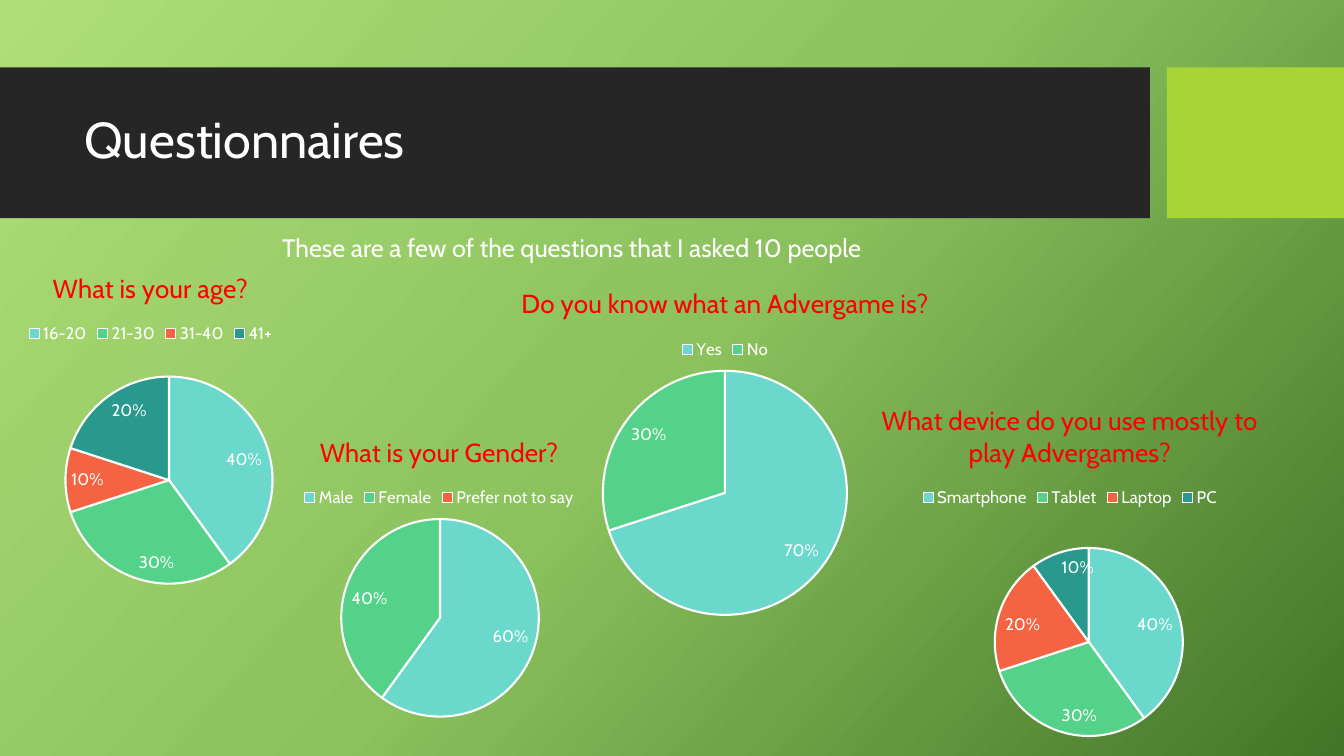
from copy import deepcopy
from dataclasses import dataclass

from lxml import etree
from pptx import Presentation
from pptx import util as u
from pptx.chart import data as chart_data
from pptx.dml.color import RGBColor
from pptx.enum import chart as chart_enum, shapes, text
from pptx.oxml import ns


@dataclass(frozen=True)
class Theme:
    font: str = "Cabin"
    white: str = "FFFFFF"
    question: str = "FF0000"
    banner: str = "262626"
    accent: str = "A7D535"
    background: tuple = ("AFDE77", "8BC25D", "437528")
    slices: tuple = ("6AD8CB", "54D289", "F46442", "28998C")
    title_size: float = 36
    intro_size: float = 18
    question_size: float = 18.6
    label_size: float = 12


THEME = Theme()

# question, answers in percent, frame (left, top, width, height),
# pie (centre x, centre y, diameter), all in centimetres
QUESTIONS = [
    ("What is your age?",
     {"16-20": 40, "21-30": 30, "31-40": 10, "41+": 20},
     (-2.72, 6.38, 13.03, 8.69), (4.26, 12.1, 5.22)),
    ("What is your Gender?",
     {"Male": 60, "Female": 40, "Prefer not to say": 0},
     (5.05, 10.52, 12.04, 7.9), (11.09, 15.57, 4.98)),
    ("Do you know what an Advergame is?",
     {"Yes": 70, "No": 30},
     (11.46, 6.76, 13.64, 9.09), (18.27, 12.42, 6.15)),
    ("What device do you use mostly to play Advergames?",
     {"Smartphone": 40, "Tablet": 30, "Laptop": 20, "PC": 10},
     (20.07, 9.7, 13.79, 9.19), (27.44, 16.18, 4.74)),
]


def color(value):
    return RGBColor.from_string(value)


def style_font(font, size, value=THEME.white):
    font.name = THEME.font
    font.size = u.Pt(size)
    font.bold = False
    font.color.rgb = color(value)


def paint_background(slide):
    fill = slide.background.fill
    fill.gradient()
    fill.gradient_angle = 318
    first, last = slide.element.iter(ns.qn("a:gs"))
    first.addnext(deepcopy(first))
    for index, (stop, value) in enumerate(zip(fill.gradient_stops, THEME.background)):
        stop.position = index / 2
        stop.color.rgb = color(value)


def add_block(slide, box, value):
    shape = slide.shapes.add_shape(
        shapes.MSO_SHAPE.RECTANGLE, *(u.Cm(length) for length in box))
    shape.shadow.inherit = False
    shape.fill.solid()
    shape.fill.fore_color.rgb = color(value)
    shape.line.fill.background()


def add_text(slide, box, words, size, anchor=text.MSO_ANCHOR.TOP, spacing=1.0):
    frame = slide.shapes.add_textbox(*(u.Cm(length) for length in box)).text_frame
    frame.word_wrap = True
    frame.vertical_anchor = anchor
    paragraph = frame.paragraphs[0]
    paragraph.line_spacing = spacing
    run = paragraph.add_run()
    run.text = words
    style_font(run.font, size)


def place_pie(chart, frame, pie):
    """Fix the pie inside the chart frame, as fractions of that frame."""
    left, top, width, height = frame
    centre_x, centre_y, diameter = pie
    values = {
        "layoutTarget": "inner",
        "xMode": "edge",
        "yMode": "edge",
        "x": (centre_x - diameter / 2 - left) / width,
        "y": (centre_y - diameter / 2 - top) / height,
        "w": diameter / width,
        "h": diameter / height,
    }
    plot_area = chart.element.find(".//" + ns.qn("c:plotArea"))
    for old_layout in plot_area.findall(ns.qn("c:layout")):
        plot_area.remove(old_layout)
    layout = etree.Element(ns.qn("c:layout"))
    manual = etree.SubElement(layout, ns.qn("c:manualLayout"))
    for name, value in values.items():
        rounded = value if isinstance(value, str) else f"{value:.4f}"
        etree.SubElement(manual, ns.qn(f"c:{name}")).set("val", rounded)
    plot_area.insert(0, layout)


def style_slices(plot, count):
    plot.vary_by_categories = True
    for index, value in enumerate(THEME.slices[:count]):
        slice_format = plot.series[0].points[index].format
        slice_format.fill.solid()
        slice_format.fill.fore_color.rgb = color(value)
        slice_format.line.color.rgb = color(THEME.white)
        slice_format.line.width = u.Pt(1.5)


def label_slices(plot):
    """Show percentages; the number format leaves zero blank."""
    plot.has_data_labels = True
    labels = plot.data_labels
    labels.show_percentage = True
    labels.show_value = False
    labels.number_format = "0%;;"
    labels.number_format_is_linked = False
    labels.position = chart_enum.XL_LABEL_POSITION.INSIDE_END
    style_font(labels.font, THEME.label_size)


def add_question_pie(slide, question, answers, frame, pie):
    data = chart_data.CategoryChartData()
    data.categories = list(answers)
    data.add_series("Series 1", list(answers.values()))
    chart = slide.shapes.add_chart(
        chart_enum.XL_CHART_TYPE.PIE, *(u.Cm(length) for length in frame), data).chart
    style_font(chart.font, THEME.label_size)

    chart.has_title = True
    run = chart.chart_title.text_frame.paragraphs[0].add_run()
    run.text = question
    style_font(run.font, THEME.question_size, THEME.question)
    chart.chart_title.include_in_layout = False

    chart.has_legend = True
    chart.legend.position = chart_enum.XL_LEGEND_POSITION.TOP
    chart.legend.include_in_layout = False
    style_font(chart.legend.font, THEME.label_size)

    style_slices(chart.plots[0], len(answers))
    label_slices(chart.plots[0])
    place_pie(chart, frame, pie)


def main():
    presentation = Presentation()
    presentation.slide_width = u.Cm(33.87)
    presentation.slide_height = u.Cm(19.05)
    slide = presentation.slides.add_slide(presentation.slide_layouts[6])

    paint_background(slide)
    add_block(slide, (0, 1.7, 28.98, 3.8), THEME.banner)
    add_block(slide, (29.41, 1.7, 4.46, 3.8), THEME.accent)
    add_text(slide, (1.88, 2.08, 26.7, 3), "Questionnaires",
             THEME.title_size, text.MSO_ANCHOR.MIDDLE, 0.9)
    add_text(slide, (6.86, 5.74, 26.9, 1.02),
             "These are a few of the questions that I asked 10 people", THEME.intro_size)
    for question in QUESTIONS:
        add_question_pie(slide, *question)

    presentation.save("out.pptx")


if __name__ == "__main__":
    main()
